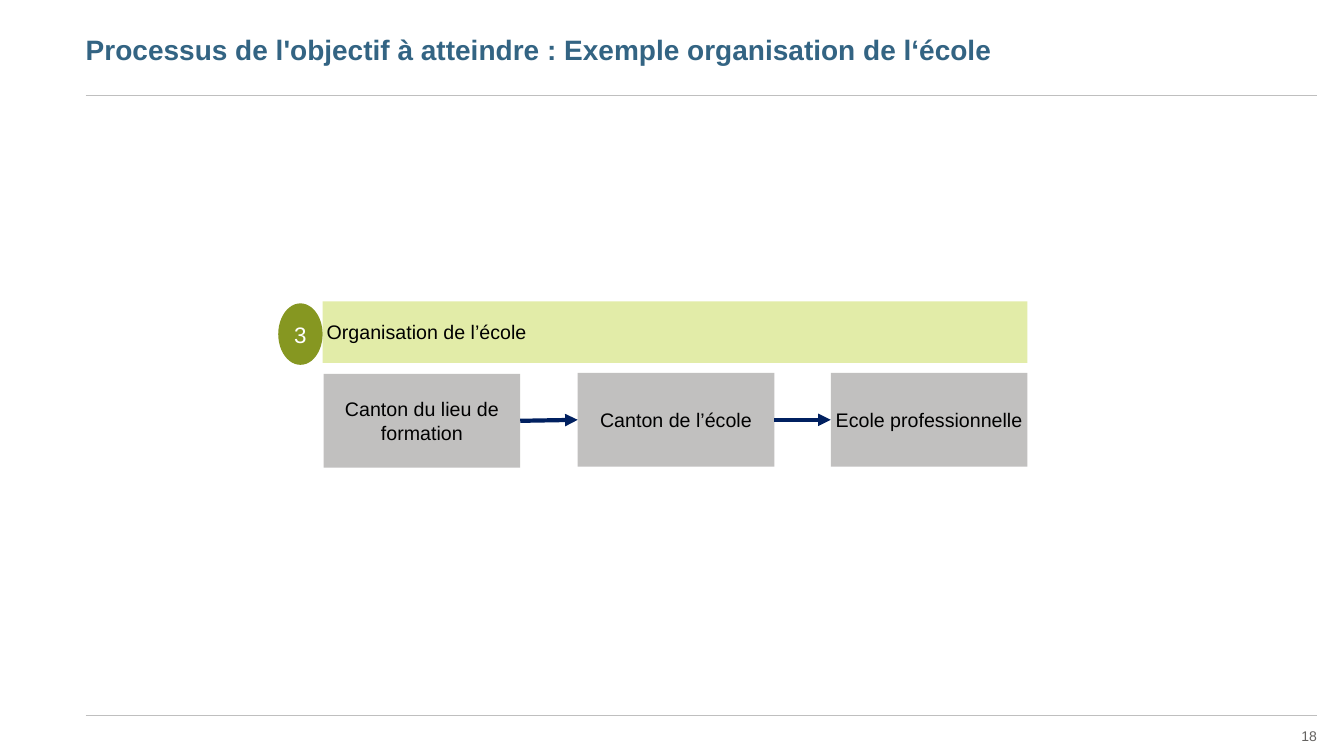
from dataclasses import dataclass

from lxml.etree import SubElement
from pptx import Presentation
from pptx.dml.color import RGBColor
from pptx.enum.shapes import MSO_CONNECTOR as LINK, MSO_SHAPE as SHAPE
from pptx.enum.text import MSO_ANCHOR as ANCHOR, PP_ALIGN as ALIGN
from pptx.oxml.ns import qn
from pptx.util import Inches, Pt


@dataclass(frozen=True)
class Theme:
    font: str = "Arial"
    title: str = "336483"
    rule: str = "BFBFBF"
    number: str = "646260"
    step: str = "C1C0BF"
    banner: str = "E2ECA8"
    badge: str = "869721"
    arrow: str = "002060"
    dark: str = "000000"
    light: str = "FFFFFF"
    title_size: int = 20
    badge_size: int = 16
    body_size: int = 14
    number_size: int = 10


THEME = Theme()
LEFT, RIGHT = 0.85, 13.06
STEP_WIDTH, STEP_HEIGHT = 1.95, 0.93
STEPS = [
    ("Canton du lieu de formation", 3.21, 3.71),
    ("Canton de l’école", 5.73, 3.7),
    ("Ecole professionnelle", 8.24, 3.7),
]


def write(shape, text, size, color, align=ALIGN.LEFT, bold=False, inset=(0.04, 0.04)):
    frame = shape.text_frame
    frame.word_wrap = True
    frame.vertical_anchor = ANCHOR.MIDDLE
    frame.margin_left = frame.margin_right = Inches(inset[0])
    frame.margin_top = frame.margin_bottom = Inches(inset[1])
    para = frame.paragraphs[0]
    para.alignment = align
    span = para.add_run()
    span.text = text
    span.font.name = THEME.font
    span.font.size = Pt(size)
    span.font.bold = bold
    span.font.color.rgb = RGBColor.from_string(color)


def add_title(page, text):
    title = page.shapes.title
    title.left, title.top = Inches(LEFT), Inches(0.17)
    title.width, title.height = Inches(RIGHT - LEFT), Inches(0.63)
    write(title, text, THEME.title_size, THEME.title, bold=True, inset=(0, 0))


def add_block(page, kind, at, fill, text, size=THEME.body_size,
              color=THEME.dark, align=ALIGN.CENTER):
    block = page.shapes.add_shape(kind, *map(Inches, at))
    block.shadow.inherit = False
    block.fill.solid()
    block.fill.fore_color.rgb = RGBColor.from_string(fill)
    block.line.fill.background()
    write(block, text, size, color, align)
    return block


def add_line(page, start, end, color, width):
    line = page.shapes.add_connector(LINK.STRAIGHT, *map(Inches, start + end))
    line.line.color.rgb = RGBColor.from_string(color)
    line.line.width = Pt(width)
    SubElement(line._element.spPr, qn("a:effectLst"))
    return line


def add_arrow(page, source, target):
    arrow = add_line(page, (0, 0), (1, 1), THEME.arrow, 3)
    arrow.begin_connect(source, 3)
    arrow.end_connect(target, 1)
    SubElement(arrow.line._get_or_add_ln(), qn("a:tailEnd"), type="triangle")


def main():
    deck = Presentation()
    deck.slide_width, deck.slide_height = Inches(13.33), Inches(7.5)
    page = deck.slides.add_slide(deck.slide_layouts[5])

    # Page frame: rules, number and title
    for height in (0.95, 7.1):
        add_line(page, (LEFT, height), (RIGHT, height), THEME.rule, 0.75)
    number = page.shapes.add_textbox(*map(Inches, (11.41, 7.1, 1.65, 0.4)))
    write(number, "18", THEME.number_size, THEME.number, ALIGN.RIGHT, inset=(0, 0.05))
    add_title(page, "Processus de l'objectif à atteindre : Exemple organisation de l‘école")

    # Process heading
    add_block(page, SHAPE.RECTANGLE, (3.2, 2.99, 6.99, 0.61), THEME.banner,
              "Organisation de l’école", align=ALIGN.LEFT)
    add_block(page, SHAPE.OVAL, (2.76, 3.01, 0.44, 0.61), THEME.badge,
              "3", THEME.badge_size, THEME.light)

    # Steps joined by arrows
    steps = [add_block(page, SHAPE.RECTANGLE, (left, top, STEP_WIDTH, STEP_HEIGHT),
                       THEME.step, text) for text, left, top in STEPS]
    for source, target in zip(steps, steps[1:]):
        add_arrow(page, source, target)

    deck.save("out.pptx")


if __name__ == "__main__":
    main()
